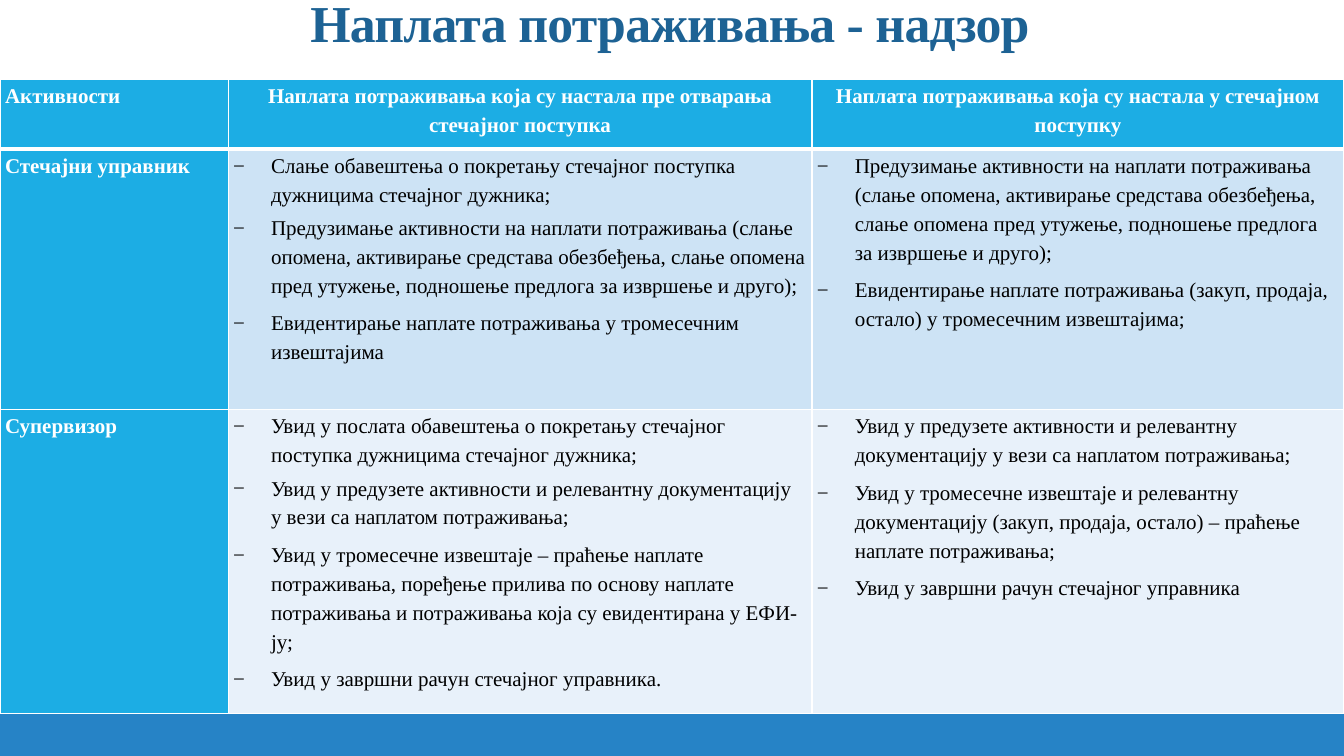
from dataclasses import dataclass

from lxml.etree import SubElement
from pptx import Presentation
from pptx.dml.color import RGBColor
from pptx.enum.shapes import MSO_SHAPE
from pptx.enum.text import MSO_ANCHOR, PP_ALIGN
from pptx.oxml.ns import qn
from pptx.util import Pt

TITLE = "Наплата потраживања - надзор"
HEADERS = [
    "Активности",
    "Наплата потраживања која су настала пре отварања стечајног поступка",
    "Наплата потраживања која су настала у стечајном поступку",
]
COLLECTION = (
    "Предузимање активности на наплати потраживања (слање опомена, активирање средстава "
    "обезбеђења, слање опомена пред утужење, подношење предлога за извршење и друго);"
)
REVIEW = "Увид у предузете активности и релевантну документацију у вези са наплатом потраживања;"
ROLES = [
    (
        "Стечајни управник",
        [
            "Слање обавештења о покретању стечајног поступка дужницима стечајног дужника;",
            COLLECTION,
            "Евидентирање наплате потраживања у тромесечним извештајима",
        ],
        [
            COLLECTION,
            "Евидентирање наплате потраживања (закуп, продаја, остало) у тромесечним извештајима;",
        ],
    ),
    (
        "Супервизор",
        [
            "Увид у послата обавештења о покретању стечајног поступка дужницима стечајног дужника;",
            REVIEW,
            "Увид у тромесечне извештаје – праћење наплате потраживања, поређење прилива по основу "
            "наплате потраживања и потраживања која су евидентирана у ЕФИ-ју;",
            "Увид у завршни рачун стечајног управника.",
        ],
        [
            REVIEW,
            "Увид у тромесечне извештаје и релевантну документацију (закуп, продаја, остало) – "
            "праћење наплате потраживања;",
            "Увид у завршни рачун стечајног управника",
        ],
    ),
]

PAGE_WIDTH, PAGE_HEIGHT = 960, 540
BAR_HEIGHT = 36
TABLE_TOP = 56.5
COLUMN_WIDTHS = [163, 417, 380]
ROW_HEIGHTS = [50, 186, 217.5]
INDENT = 27


@dataclass(frozen=True)
class Theme:
    font: str = "Times New Roman"
    title_size: float = 37
    body_size: float = 15
    title: str = "1D6294"
    bar: str = "2683C6"
    accent: str = "1CADE4"
    bands: tuple = ("CDE3F5", "E8F1FA")
    white: str = "FFFFFF"
    black: str = "000000"


THEME = Theme()


def add_span(para, text, size, color, bold):
    span = para.add_run()
    span.text = text
    span.font.name = THEME.font
    span.font.size = Pt(size)
    span.font.bold = bold
    span.font.color.rgb = RGBColor.from_string(color)
    return span


def add_title(page):
    box = page.shapes.title
    box.left, box.top, box.width, box.height = Pt(75), Pt(-17), Pt(807), Pt(114)
    frame = box.text_frame
    frame.word_wrap = True
    frame.vertical_anchor = MSO_ANCHOR.BOTTOM
    frame.margin_bottom = Pt(59)
    para = frame.paragraphs[0]
    para.alignment = PP_ALIGN.CENTER
    para.line_spacing = 0.85
    span = add_span(para, TITLE, THEME.title_size, THEME.title, True)
    span.font._element.set("spc", "-50")


def add_bar(page):
    bar = page.shapes.add_shape(
        MSO_SHAPE.RECTANGLE, 0, Pt(PAGE_HEIGHT - BAR_HEIGHT), Pt(PAGE_WIDTH), Pt(BAR_HEIGHT)
    )
    bar.shadow.inherit = False
    bar.fill.solid()
    bar.fill.fore_color.rgb = RGBColor.from_string(THEME.bar)
    bar.line.fill.background()


def style_cell(cell, fill, bottom_width=1, top_width=1):
    cell.margin_left = cell.margin_right = Pt(3.6)
    cell.margin_top = cell.margin_bottom = 0
    properties = cell._tc.get_or_add_tcPr()
    for side, width in (("L", 1), ("R", 1), ("T", top_width), ("B", bottom_width)):
        line = SubElement(properties, qn(f"a:ln{side}"), w=str(Pt(width)))
        solid = SubElement(line, qn("a:solidFill"))
        SubElement(solid, qn("a:srgbClr"), val=THEME.white)
    cell.fill.solid()
    cell.fill.fore_color.rgb = RGBColor.from_string(fill)


def write_cell(cell, texts, color, bold=False, centred=False, bulleted=False, tight_first=False):
    """Write one paragraph per text; tight_first drops the space after the first."""
    frame = cell.text_frame
    for index, text in enumerate(texts):
        para = frame.add_paragraph() if index else frame.paragraphs[0]
        para.alignment = PP_ALIGN.CENTER if centred else PP_ALIGN.LEFT
        para.line_spacing = 1.25
        para.space_before = Pt(3)
        para.space_after = Pt(0 if tight_first and index == 0 else 3)
        if bulleted:
            properties = para._p.get_or_add_pPr()
            properties.set("marL", str(Pt(INDENT)))
            properties.set("indent", str(-Pt(INDENT)))
            SubElement(properties, qn("a:buFont"), typeface=THEME.font)
            SubElement(properties, qn("a:buChar"), char="−")
        add_span(para, text, THEME.body_size, color, bold)


def add_activity_table(page):
    table = page.shapes.add_table(
        len(ROLES) + 1, len(HEADERS), 0, Pt(TABLE_TOP), Pt(PAGE_WIDTH), Pt(sum(ROW_HEIGHTS))
    ).table
    for column, width in zip(table.columns, COLUMN_WIDTHS):
        column.width = Pt(width)
    for row, height in zip(table.rows, ROW_HEIGHTS):
        row.height = Pt(height)

    for column, header in enumerate(HEADERS):
        cell = table.cell(0, column)
        style_cell(cell, THEME.accent, bottom_width=3)
        write_cell(cell, [header], THEME.white, bold=True, centred=column > 0)

    for row, (role, *duties) in enumerate(ROLES, 1):
        top_width = 3 if row == 1 else 1
        cell = table.cell(row, 0)
        style_cell(cell, THEME.accent, top_width=top_width)
        write_cell(cell, [role], THEME.white, bold=True)
        for column, texts in enumerate(duties, 1):
            cell = table.cell(row, column)
            style_cell(cell, THEME.bands[row - 1], top_width=top_width)
            write_cell(cell, texts, THEME.black, bulleted=True, tight_first=column == 1)


def main():
    deck = Presentation()
    deck.slide_width, deck.slide_height = Pt(PAGE_WIDTH), Pt(PAGE_HEIGHT)
    page = deck.slides.add_slide(deck.slide_layouts[5])
    add_bar(page)
    add_title(page)
    add_activity_table(page)
    deck.save("out.pptx")


if __name__ == "__main__":
    main()
